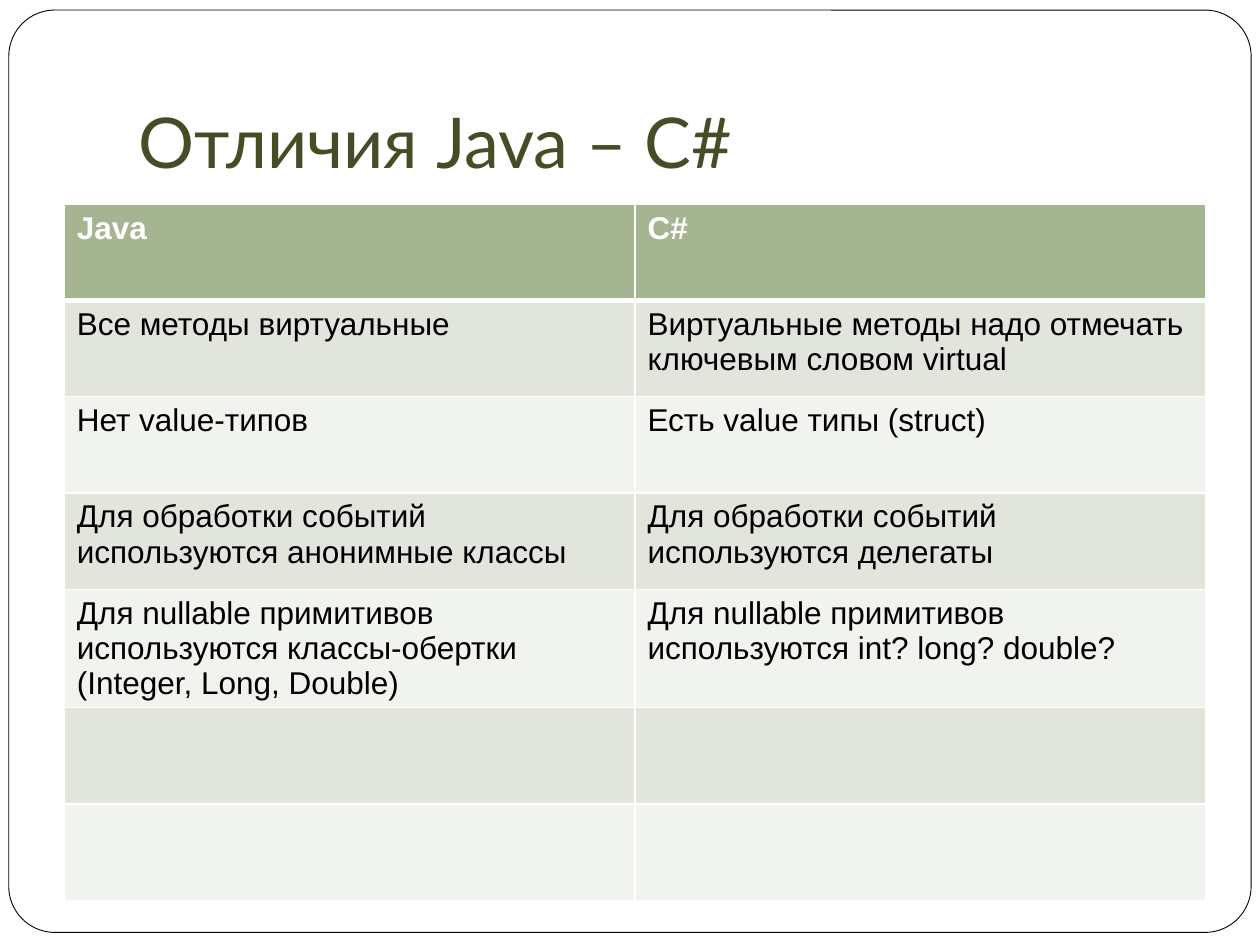
from pptx import Presentation
from pptx import util as u
from pptx.dml.color import RGBColor
from pptx.enum import shapes, text
from pptx.oxml import ns
from lxml import etree

ROWS = [
    ("Java", "C#"),
    ("Все методы виртуальные",
     "Виртуальные методы надо отмечать ключевым словом virtual"),
    ("Нет value-типов", "Есть value типы (struct)"),
    ("Для обработки событий используются анонимные классы",
     "Для обработки событий используются делегаты"),
    ("Для nullable примитивов используются классы-обертки (Integer, Long, Double)",
     "Для nullable примитивов используются int? long? double?"),
    ("", ""),
    ("", ""),
]


def color(value):
    return RGBColor.from_string(value)


class SlideBuilder:
    heading_font, body_font = "Lato", "Arial"
    white, black, olive = "FFFFFF", "000000", "444D26"
    header_fill, bands = "A5B592", ("E1E5DC", "F0F3EE")

    def __init__(self, page):
        self.page = page

    def add_run(self, para, words, size, font, ink, bold=False):
        span = para.add_run()
        span.text = words
        span.font.size = u.Pt(size)
        span.font.name = font
        span.font.bold = bold
        span.font.color.rgb = color(ink)

    def frame(self, left, top, width, height):
        box = self.page.shapes.add_shape(
            shapes.MSO_SHAPE.ROUNDED_RECTANGLE, u.Inches(left), u.Inches(top),
            u.Inches(width), u.Inches(height))
        box.adjustments[0] = 0.05
        box.shadow.inherit = False
        box.fill.solid()
        box.fill.fore_color.rgb = color(self.white)
        box.line.color.rgb = color(self.black)
        box.line.width = u.Pt(0.5)
        # Send behind the title
        box._element.getparent().insert(2, box._element)

    def title(self, words, left, top, width, height):
        box = self.page.shapes.title
        box.left, box.top = u.Inches(left), u.Inches(top)
        box.width, box.height = u.Inches(width), u.Inches(height)
        frame = box.text_frame
        frame.word_wrap = True
        frame.auto_size = text.MSO_AUTO_SIZE.NONE
        frame.vertical_anchor = text.MSO_ANCHOR.BOTTOM
        frame.margin_bottom = u.Inches(0.1)
        para = frame.paragraphs[0]
        para.alignment = text.PP_ALIGN.LEFT
        self.add_run(para, words, 40, self.heading_font, self.olive)

    def borders(self, cell, top, bottom):
        properties = cell._tc.get_or_add_tcPr()
        widths = {"a:lnL": 1, "a:lnR": 1, "a:lnT": top, "a:lnB": bottom}
        for place, (tag, points) in enumerate(widths.items()):
            line = etree.Element(ns.qn(tag), w=str(u.Pt(points)))
            fill = etree.SubElement(line, ns.qn("a:solidFill"))
            etree.SubElement(fill, ns.qn("a:srgbClr"), val=self.white)
            properties.insert(place, line)

    def table(self, rows, left, top, width, height):
        grid = self.page.shapes.add_table(
            len(rows), len(rows[0]), u.Inches(left), u.Inches(top),
            u.Inches(width), u.Inches(height)).table
        for r, row in enumerate(rows):
            header = r == 0
            for c, words in enumerate(row):
                cell = grid.cell(r, c)
                cell.fill.solid()
                cell.fill.fore_color.rgb = color(
                    self.header_fill if header else self.bands[(r - 1) % 2])
                self.borders(cell, 3 if r == 1 else 1, 3 if header else 1)
                if words:
                    self.add_run(cell.text_frame.paragraphs[0], words, 18, self.body_font,
                                 self.white if header else self.black, header)


def main():
    deck = Presentation()
    deck.slide_width, deck.slide_height = u.Inches(10), u.Inches(7.5)
    # Title Only layout
    builder = SlideBuilder(deck.slides.add_slide(deck.slide_layouts[5]))

    # Rounded page frame
    builder.frame(0.07, 0.08, 9.86, 7.32)
    # Heading
    builder.title("Отличия Java – C#", 1, 0.3, 8.5, 1.25)
    # Language comparison
    builder.table(ROWS, 0.51, 1.62, 9.06, 5.35)

    deck.save("out.pptx")


if __name__ == "__main__":
    main()
